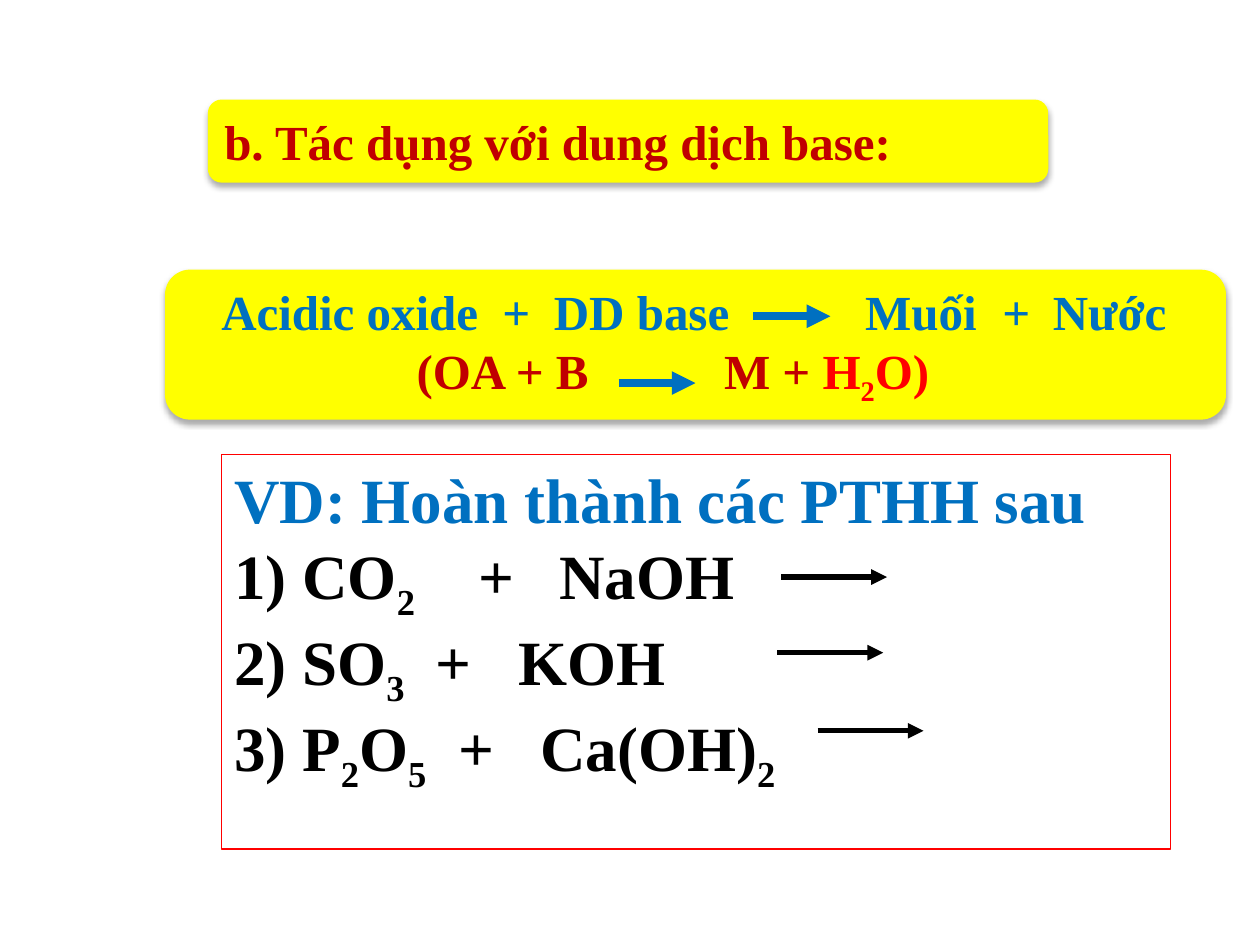
from lxml import etree
from pptx import Presentation
from pptx.dml.color import RGBColor
from pptx.enum.shapes import MSO_CONNECTOR, MSO_SHAPE
from pptx.enum.text import MSO_ANCHOR, PP_ALIGN
from pptx.oxml import parse_xml
from pptx.oxml.ns import nsdecls, qn
from pptx.util import Inches, Pt

ROUND, RECT = MSO_SHAPE.ROUNDED_RECTANGLE, MSO_SHAPE.RECTANGLE
LINE = MSO_CONNECTOR.STRAIGHT
MIDDLE, TOP, LEFT = MSO_ANCHOR.MIDDLE, MSO_ANCHOR.TOP, PP_ALIGN.LEFT

THEME = {
    "font": "Times New Roman", "title": 28, "task": 36,
    "dark": "C00000", "red": "FF0000", "blue": "0070C0",
    "black": "000000", "yellow": "FFFF00",
}

# A paragraph is (tab stops in inches, [(text, colour), ...]).
# An underscore lowers the one character after it.
RULE = [
    ([0.29, 2.52, 2.93, 5.40, 6.49, 6.89],
     [("\tAcidic oxide\t+\tDD base\tMuối\t+\tNước", "blue")]),
    ([1.84, 4.28], [("\t(OA + B\tM + ", "dark"), ("H_2O)", "red")]),
]
TASKS = [
    ([], [("VD: Hoàn thành các PTHH sau", "blue")]),
    ([1.94, 2.58], [("1) CO_2\t+\tNaOH", "black")]),
    ([1.60, 2.26], [("2) SO_3\t+\tKOH", "black")]),
    ([1.78, 2.43], [("3) P_2O_5\t+\tCa(OH)_2", "black")]),
]
TITLE = [([], [("b. Tác dụng với dung dịch base:", "dark")])]

# kind, (left, top, width, height), type size, anchor, paragraphs
BOXES = [
    (ROUND, (1.31, 2.14, 8.42, 1.19), "title", MIDDLE, RULE),
    (RECT, (1.76, 3.61, 7.53, 3.13), "task", TOP, TASKS),
    (ROUND, (1.65, 0.79, 6.67, 0.66), "title", MIDDLE, TITLE),
]

# length, colour, weight, starting points
ARROWS = [
    (0.61, "blue", 4.5, [(5.98, 2.51), (4.91, 3.04)]),
    (0.84, "black", 3, [(6.2, 4.58), (6.17, 5.18), (6.49, 5.8)]),
]

SHADOW = (
    f'<a:effectLst {nsdecls("a")}><a:outerShdw blurRad="{Pt(3.5)}" '
    f'dist="{Pt(2.2)}" dir="5400000" rotWithShape="0">'
    '<a:srgbClr val="000000"><a:alpha val="32000"/></a:srgbClr>'
    '</a:outerShdw></a:effectLst>'
)


def color(name):
    return RGBColor.from_string(THEME[name])


def add_run(para, text, size, tint, low=False):
    run = para.add_run()
    run.text = text
    style = {"name": THEME["font"], "size": Pt(THEME[size]), "bold": True}
    for key, value in style.items():
        setattr(run.font, key, value)
    run.font.color.rgb = color(tint)
    if low:
        run.font._element.set("baseline", "-25000")


def add_text(para, text, size, tint):
    """Write text, with each character after an underscore as a subscript."""
    head, *rest = text.split("_")
    add_run(para, head, size, tint)
    for part in rest:
        add_run(para, part[0], size, tint, low=True)
        if part[1:]:
            add_run(para, part[1:], size, tint)


def set_tabs(para, stops):
    if stops:
        tabs = etree.SubElement(para._p.get_or_add_pPr(), qn("a:tabLst"))
        for stop in stops:
            etree.SubElement(tabs, qn("a:tab"), pos=str(Inches(stop)), algn="l")


def add_box(slide, kind, place, size, anchor, paras):
    box = slide.shapes.add_shape(kind, *map(Inches, place))
    box.shadow.inherit = False
    if kind == ROUND:
        box.fill.solid()
        box.fill.fore_color.rgb = color("yellow")
        box.line.fill.background()
        props = box._element.spPr
        props.replace(props.find(qn("a:effectLst")), parse_xml(SHADOW))
    else:
        box.fill.background()
        box.line.color.rgb = color("red")
        box.line.width = Pt(0.75)
    frame = box.text_frame
    frame.word_wrap = True
    frame.vertical_anchor = anchor
    for num, (stops, parts) in enumerate(paras):
        para = frame.add_paragraph() if num else frame.paragraphs[0]
        para.alignment = LEFT
        set_tabs(para, stops)
        for text, tint in parts:
            add_text(para, text, size, tint)


def add_arrow(slide, left, top, length, tint, weight):
    y = Inches(top)
    arrow = slide.shapes.add_connector(
        LINE, Inches(left), y, Inches(left + length), y)
    arrow.line.color.rgb = color(tint)
    arrow.line.width = Pt(weight)
    etree.SubElement(arrow.line._get_or_add_ln(), qn("a:tailEnd"), type="triangle")
    etree.SubElement(arrow._element.spPr, qn("a:effectLst"))


def main():
    deck = Presentation()
    deck.slide_width, deck.slide_height = Inches(10), Inches(7.5)
    slide = deck.slides.add_slide(deck.slide_layouts[6])
    for box in BOXES:
        add_box(slide, *box)
    for length, tint, weight, starts in ARROWS:
        for left, top in starts:
            add_arrow(slide, left, top, length, tint, weight)
    deck.save("out.pptx")


if __name__ == "__main__":
    main()
